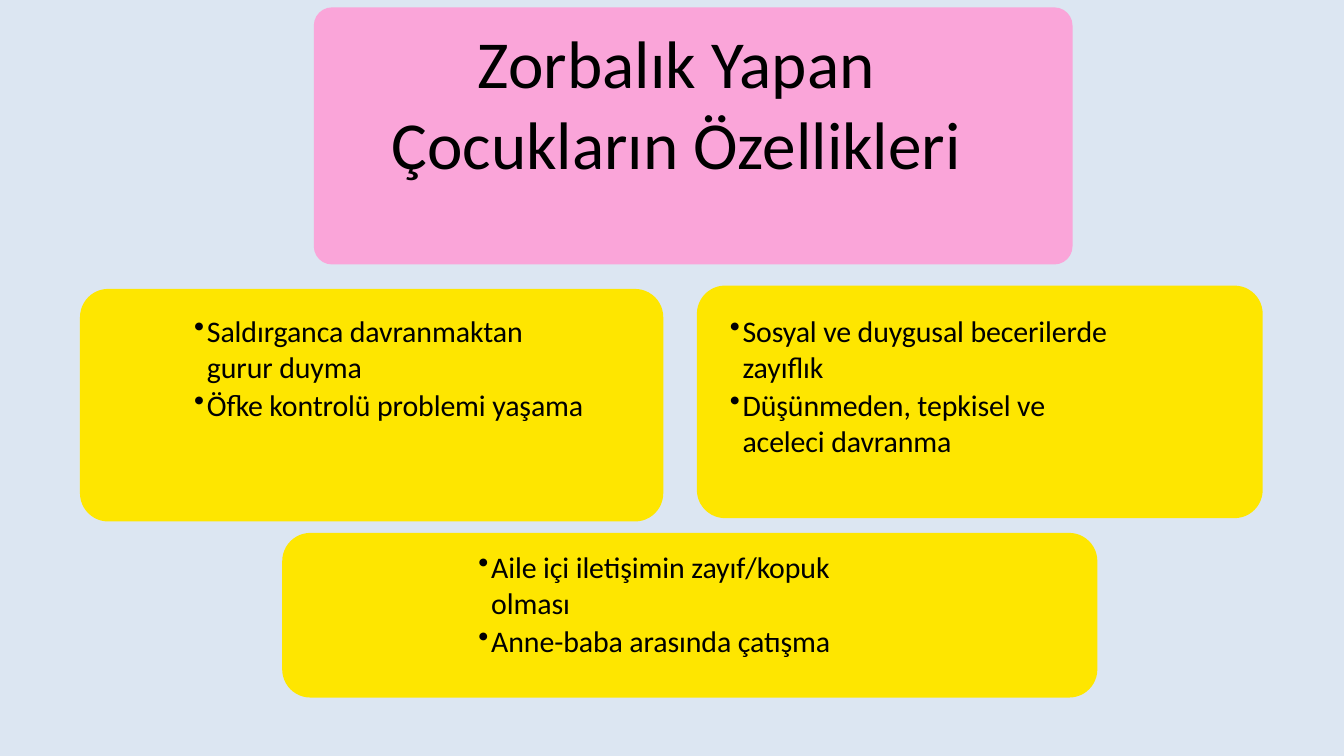
from pptx import Presentation, util as u
from pptx.dml.color import RGBColor
from pptx.enum import shapes, text
from lxml import etree

HUES = {"back": "DCE6F2", "title": "FAA5D9", "card": "FEE600", "ink": "000000"}
WIDE, HIGH = u.Inches(20), u.Inches(11.25)
COL, ROW = WIDE / 100, HIGH / 100
FONT = "Calibri"
NS = "{http://schemas.openxmlformats.org/drawingml/2006/main}"

CARDS = [
    ((5.95, 38.22, 43.4, 30.76), (8.45, 3.11, 29.15, 24.71),
     ["Saldırganca davranmaktan gurur duyma",
      "Öfke kontrolü problemi yaşama"]),
    ((51.85, 37.78, 42.1, 30.76), (2.4, 3.55, 29.95, 24.71),
     ["Sosyal ve duygusal becerilerde zayıflık",
      "Düşünmeden, tepkisel ve aceleci davranma"]),
    ((21, 70.49, 60.65, 21.78), (14.55, 2.04, 31.8, 25.07),
     ["Aile içi iletişimin zayıf/kopuk olması",
      "Anne-baba arasında çatışma"]),
]


def hue(name):
    """Return the named colour."""
    return RGBColor.from_string(HUES[name])


def place(box):
    """Turn columns and rows into slide lengths."""
    x, y, w, h = box
    return [u.Emu(round(n)) for n in (x * COL, y * ROW, w * COL, h * ROW)]


def panel(slide, box, fill, radius):
    """Draw a plain rounded panel with the given corner radius in inches."""
    x, y, w, h = place(box)
    shape = slide.shapes.add_shape(
        shapes.MSO_SHAPE.ROUNDED_RECTANGLE, x, y, w, h)
    shape.adjustments[0] = u.Inches(radius) / min(w, h)
    shape.shadow.inherit = False
    shape.fill.solid()
    shape.fill.fore_color.rgb = hue(fill)
    shape.line.fill.background()


def label(slide, box, inner, lines, size):
    """Write lines in a frame offset from its box and return the frame."""
    dx, dy, w, h = inner
    area = place((box[0] + dx, box[1] + dy, w, h))
    frame = slide.shapes.add_textbox(*area).text_frame
    frame.word_wrap = True
    frame.text = "\n".join(lines)
    for para in frame.paragraphs:
        para.font.size = u.Pt(size)
        para.font.name = FONT
        para.font.color.rgb = hue("ink")
    return frame


def bullet(para):
    """Give a paragraph a hanging bullet and slightly tight letters."""
    para.space_before = u.Pt(2.5)
    props = para._p.get_or_add_pPr()
    props.set("marL", str(u.Inches(0.2)))
    props.set("indent", str(u.Inches(-0.19)))
    mark = etree.Element(NS + "buChar", char="•")
    props.insert_element_before(mark, "a:tabLst", "a:defRPr", "a:extLst")
    for run in para.runs:
        run._r.get_or_add_rPr().set("spc", "-15")


def title(slide, box):
    """Build the heading panel."""
    panel(slide, box, "title", 0.27)
    frame = label(slide, box, (1, 1.42, 51.95, 33.24),
                  ["Zorbalık Yapan Çocukların Özellikleri"], 72)
    frame.paragraphs[0].alignment = text.PP_ALIGN.CENTER


def card(slide, box, inner, lines):
    """Build a yellow panel with a bullet list."""
    panel(slide, box, "card", 0.42)
    frame = label(slide, box, inner, lines, 32)
    frame.margin_left = frame.margin_right = 0
    frame.margin_top = frame.margin_bottom = 0
    for para in frame.paragraphs:
        bullet(para)


def main():
    """Build and save the slide."""
    deck = Presentation()
    deck.slide_width, deck.slide_height = WIDE, HIGH
    slide = deck.slides.add_slide(deck.slide_layouts[6])
    slide.background.fill.solid()
    slide.background.fill.fore_color.rgb = hue("back")
    title(slide, (23.35, 0.98, 56.45, 34))
    for box, inner, lines in CARDS:
        card(slide, box, inner, lines)
    deck.save("out.pptx")


if __name__ == "__main__":
    main()
